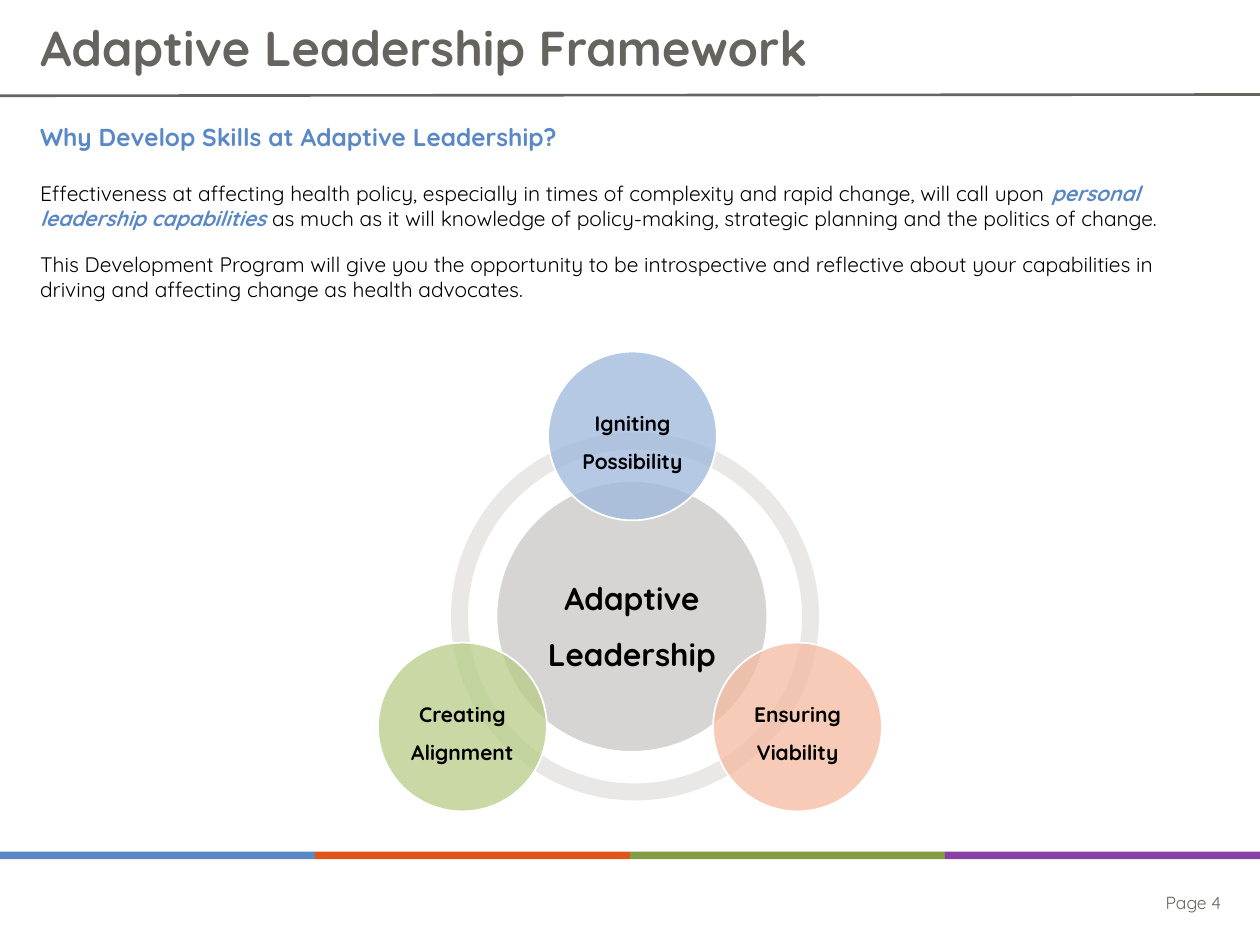
from lxml import etree
from pptx import Presentation
from pptx.dml.color import RGBColor
from pptx.enum.shapes import MSO_CONNECTOR, MSO_SHAPE
from pptx.enum.text import MSO_ANCHOR, MSO_AUTO_SIZE, PP_ALIGN
from pptx.oxml.ns import qn
from pptx.util import Inches, Pt

RECTANGLE, OVAL, ARC = MSO_SHAPE.RECTANGLE, MSO_SHAPE.OVAL, MSO_SHAPE.BLOCK_ARC
STRAIGHT = MSO_CONNECTOR.STRAIGHT
MIDDLE, TOP = MSO_ANCHOR.MIDDLE, MSO_ANCHOR.TOP
LEFT, CENTER, RIGHT = PP_ALIGN.LEFT, PP_ALIGN.CENTER, PP_ALIGN.RIGHT

BLACK = RGBColor(0x00, 0x00, 0x00)
WHITE = RGBColor(0xFF, 0xFF, 0xFF)
SLATE = RGBColor(0x66, 0x64, 0x5E)
BLUE = RGBColor(0x5A, 0x87, 0xC6)
ORANGE = RGBColor(0xDF, 0x55, 0x17)
GREEN = RGBColor(0x82, 0x9C, 0x42)
PURPLE = RGBColor(0x86, 0x40, 0xA6)
HUB_GREY = RGBColor(0xD7, 0xD5, 0xD3)
RING_GREY = RGBColor(0xE9, 0xE8, 0xE7)
PALE_GREEN = RGBColor(0xB7, 0xCC, 0x86)
PALE_ORANGE = RGBColor(0xF5, 0xBA, 0x9F)
PALE_BLUE = RGBColor(0x9C, 0xB7, 0xDD)

FONT = "Quicksand"
WIDTH, HEIGHT = 10, 7.5
MARGIN = 0.22
CONTENT_WIDTH = WIDTH - 2 * MARGIN


def inches(box):
    return [Inches(length) for length in box]


def add_run(paragraph, text, size, color, bold=False, italic=False):
    run = paragraph.add_run()
    run.text = text
    font = run.font
    font.name, font.size, font.bold, font.italic = FONT, Pt(size), bold, italic
    font.color.rgb = color


def format_frame(frame, anchor, inset=None):
    frame.word_wrap = True
    frame.auto_size = MSO_AUTO_SIZE.NONE
    frame.vertical_anchor = anchor
    if inset is not None:
        frame.margin_left = frame.margin_right = Inches(inset)
        frame.margin_top = frame.margin_bottom = Inches(inset)


def add_text(slide, box, paragraphs, size, align=LEFT, space_after=0):
    frame = slide.shapes.add_textbox(*inches(box)).text_frame
    format_frame(frame, TOP)
    for index, runs in enumerate(paragraphs):
        paragraph = frame.add_paragraph() if index else frame.paragraphs[0]
        paragraph.alignment = align
        paragraph.space_after = Pt(space_after)
        for text, color, *style in runs:
            add_run(paragraph, text, size, color, *style)


def add_filled(slide, kind, box, color, opacity=100):
    shape = slide.shapes.add_shape(kind, *inches(box))
    shape.shadow.inherit = False
    shape.fill.solid()
    shape.fill.fore_color.rgb = color
    shape.line.fill.background()
    if opacity < 100:
        fill_color = shape.fill._xPr.find(qn("a:solidFill"))[0]
        etree.SubElement(fill_color, qn("a:alpha"), val=str(opacity * 1000))
    return shape


def add_circle(slide, center, diameter, label, size, color, opacity=100):
    x, y = center
    box = (x - diameter / 2, y - diameter / 2, diameter, diameter)
    circle = add_filled(slide, OVAL, box, color, opacity)
    circle.line.color.rgb = WHITE
    circle.line.width = Pt(1)
    format_frame(circle.text_frame, MIDDLE, 0.01)
    paragraph = circle.text_frame.paragraphs[0]
    paragraph.alignment = CENTER
    paragraph.line_spacing = 1.5
    add_run(paragraph, label, size, BLACK, True)


def add_title(slide, box):
    title = slide.shapes.title
    title.left, title.top, title.width, title.height = inches(box)
    format_frame(title.text_frame, MIDDLE)
    paragraph = title.text_frame.paragraphs[0]
    paragraph.alignment = LEFT
    paragraph.line_spacing = 0.9
    add_run(paragraph, "Adaptive Leadership Framework", 28, SLATE, True)


def add_frame(slide, rule_top, band_top):
    ends = inches((0, rule_top + 0.01, WIDTH, rule_top))
    rule = slide.shapes.add_connector(STRAIGHT, *ends)
    rule.line.color.rgb = SLATE
    rule.line.width = Pt(1.5)
    etree.SubElement(rule._element.spPr, qn("a:effectLst"))
    colors = (BLUE, ORANGE, GREEN, PURPLE)
    column = WIDTH / len(colors)
    for index, color in enumerate(colors):
        add_filled(slide, RECTANGLE, (index * column, band_top, column, 0.06), color)
    add_text(slide, (8.12, band_top + 0.27, 1.67, 0.27),
             [[("Page 4", SLATE)]], 10, RIGHT)


def add_introduction(slide, left, top, width):
    add_text(slide, (left, top, width, 0.34),
             [[("Why Develop Skills at Adaptive Leadership?", BLUE, True)]], 14)
    add_text(slide, (left, top + 0.46, width, 1.28), [
        [("Effectiveness at affecting health policy, especially in times of "
          "complexity and rapid change, will call upon ", BLACK),
         ("personal leadership capabilities ", BLUE, True, True),
         ("as much as it will knowledge of policy-making, strategic planning "
          "and the politics of change.", BLACK)],
        [("This Development Program will give you the opportunity to be "
          "introspective and reflective about your capabilities in driving and "
          "affecting change as health advocates.", BLACK)],
    ], 12, space_after=12)


def add_diagram(slide, left, top, width, height):
    ring, hub, satellite = 0.73 * width, 0.5375 * width, 0.335 * width
    radius = satellite / 2
    middle = left + width / 2
    center_y = top + 0.576 * height
    add_circle(slide, (middle + 0.015, center_y), hub,
               "Adaptive Leadership", 18, HUB_GREY)
    ring_box = (middle + 0.04 - ring / 2, center_y - ring / 2, ring, ring)
    for start, end in ((90, 162), (18, 90), (162, 18)):
        arc = add_filled(slide, ARC, ring_box, RING_GREY)
        for index, value in enumerate((start * 0.6, end * 0.6, 0.046)):
            arc.adjustments[index] = value
    bottom_y = top + height - radius
    satellites = (
        ("Creating Alignment", left + radius, bottom_y, PALE_GREEN, 75),
        ("Ensuring Viability", left + width - radius, bottom_y, PALE_ORANGE, 75),
        ("Igniting Possibility", middle + 0.02, top + radius, PALE_BLUE, 74),
    )
    for label, x, y, color, opacity in satellites:
        add_circle(slide, (x, y), satellite, label, 12, color, opacity)


def main():
    presentation = Presentation()
    presentation.slide_width, presentation.slide_height = inches((WIDTH, HEIGHT))
    slide = presentation.slides.add_slide(presentation.slide_layouts[5])
    add_frame(slide, 0.75, 6.76)
    add_title(slide, (MARGIN, 0.03, CONTENT_WIDTH, 0.74))
    add_introduction(slide, MARGIN, 0.92, CONTENT_WIDTH)
    add_diagram(slide, 3, 2.79, 4, 3.65)
    presentation.save("out.pptx")


if __name__ == "__main__":
    main()
